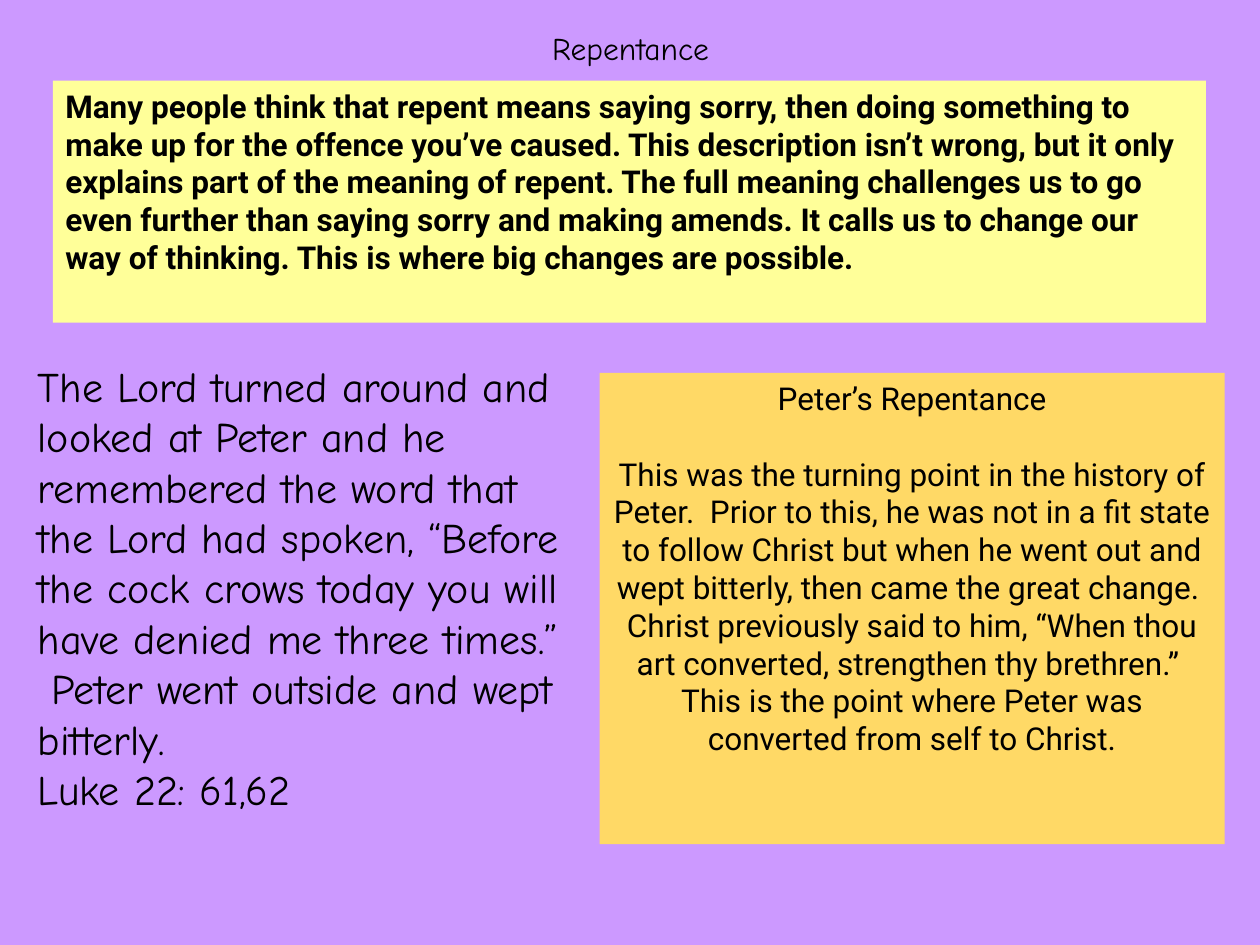
"""Build the Repentance slide with a passage and two coloured panels."""
from pptx import Presentation
from pptx.dml.color import RGBColor
from pptx.enum.shapes import MSO_SHAPE as Shape
from pptx.enum.text import MSO_ANCHOR as Anchor, MSO_AUTO_SIZE as AutoSize, PP_ALIGN as Align
from pptx.util import Inches, Pt


def paint(fill, color):
    fill.solid()
    fill.fore_color.rgb = RGBColor.from_string(color)


def write(shape, paragraphs, align, gap=0, **font_values):
    frame = shape.text_frame
    frame.text = "\n".join(paragraphs)
    frame_values = {"word_wrap": True, "auto_size": AutoSize.NONE, "vertical_anchor": Anchor.TOP}
    for name, value in frame_values.items():
        setattr(frame, name, value)
    for index, paragraph in enumerate(frame.paragraphs):
        paragraph.alignment = align
        paragraph.space_before = Pt(gap if index else 0)
        for name, value in font_values.items():
            setattr(paragraph.font, name, value)
        paint(paragraph.font.fill, "000000")


presentation = Presentation()
presentation.slide_width, presentation.slide_height = Inches(10), Inches(7.5)
slide = presentation.slides.add_slide(presentation.slide_layouts[5])
paint(slide.background.fill, "CC99FF")

title = slide.shapes.title
title_place = {"left": 1.54, "top": 0.18, "width": 6.93, "height": 0.4}
for name, value in title_place.items():
    setattr(title, name, Inches(value))
write(title, ["Repentance"], Align.CENTER, name="Comic Neue", size=Pt(18))

peter = [
    "Peter’s Repentance",
    "This was the turning point in the history of Peter.  Prior to this, he was not in a fit state "
    "to follow Christ but when he went out and wept bitterly, then came the great change.  "
    "Christ previously said to him, “When thou art converted, strengthen thy brethren.”  "
    "This is the point where Peter was converted from self to Christ.",
]
meaning = [
    "Many people think that repent means saying sorry, then doing something to make up for the "
    "offence you’ve caused. This description isn’t wrong, but it only explains part of the meaning "
    "of repent. The full meaning challenges us to go even further than saying sorry and making "
    "amends. It calls us to change our way of thinking. This is where big changes are possible.",
]
panels = [
    ((4.76, 2.96, 4.96, 3.74), "FFD966", peter, Align.CENTER, False),
    ((0.42, 0.64, 9.15, 1.92), "FFFF99", meaning, Align.LEFT, True),
]
for place, color, paragraphs, align, bold in panels:
    panel = slide.shapes.add_shape(Shape.RECTANGLE, *map(Inches, place))
    panel.shadow.inherit = False
    paint(panel.fill, color)
    panel.line.fill.background()
    write(panel, paragraphs, align, gap=21.6, name="Roboto", size=Pt(18), bold=bold)

passage = [
    "The Lord turned around and looked at Peter and he remembered the word that the Lord had "
    "spoken, “Before the cock crows today you will have denied me three times.”  Peter went "
    "outside and wept bitterly.",
    "Luke 22: 61,62",
]
passage_box = slide.shapes.add_textbox(*map(Inches, (0.2, 2.81, 4.41, 4.14)))
write(passage_box, passage, Align.LEFT, name="Comic Neue", size=Pt(24))

presentation.save("out.pptx")
